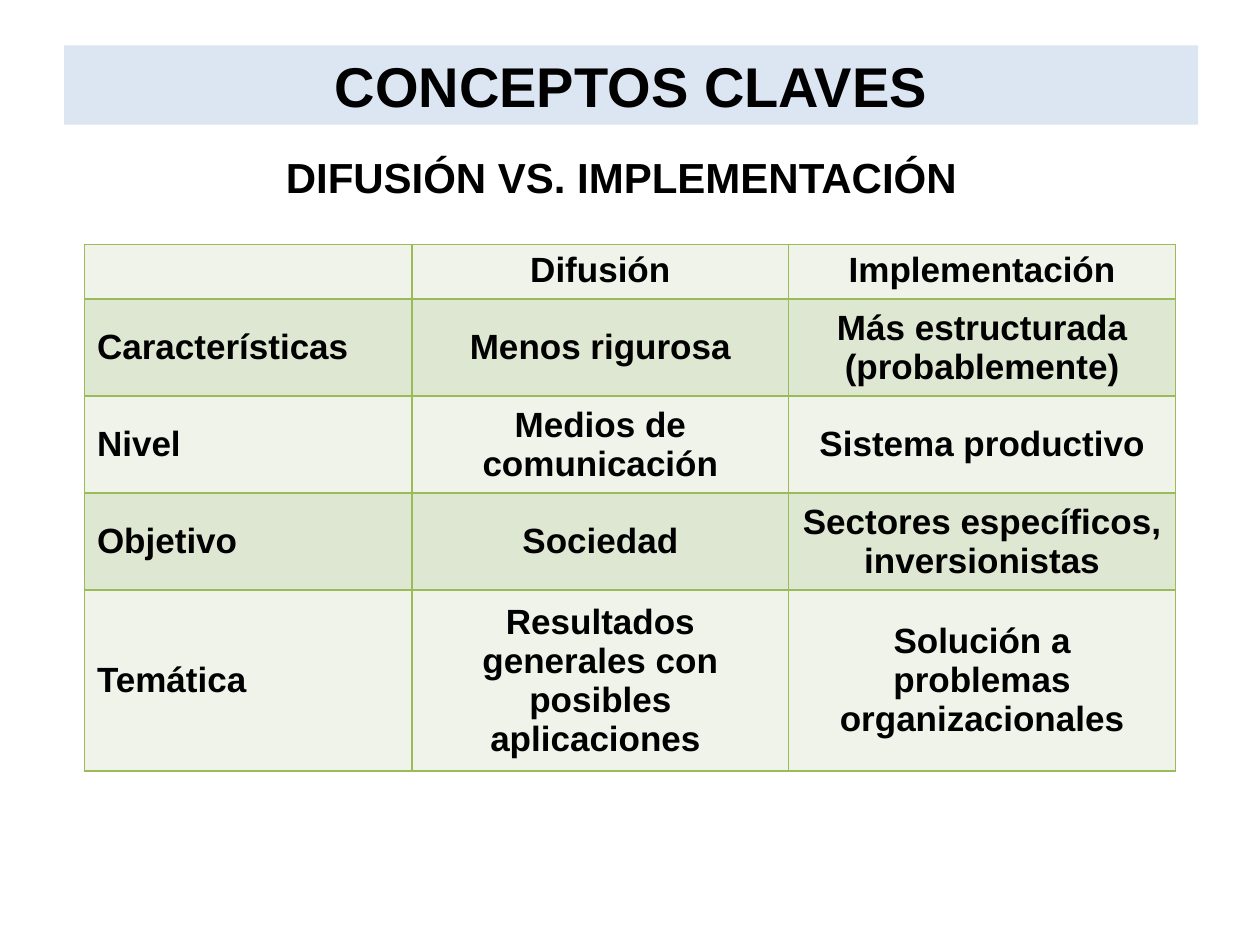
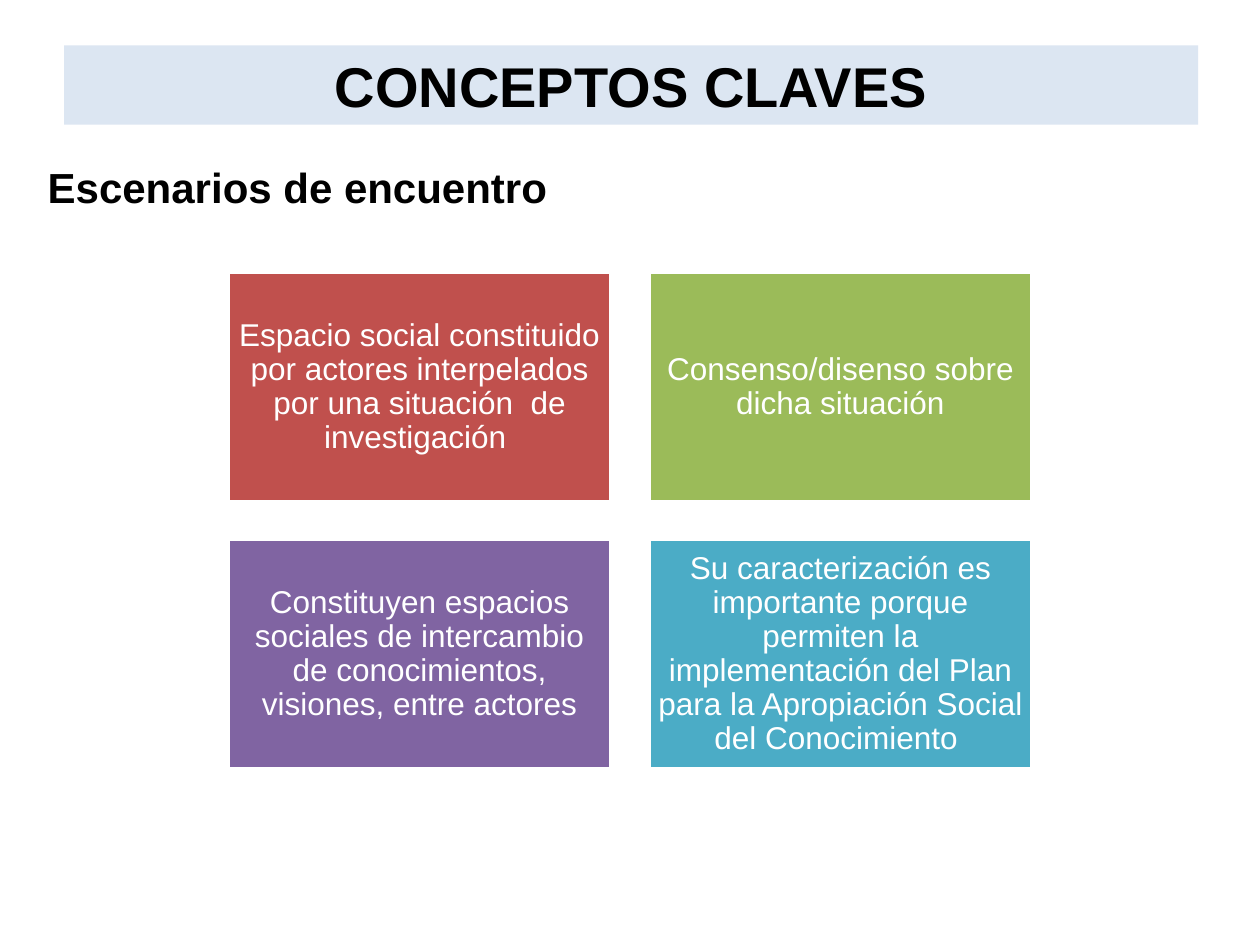
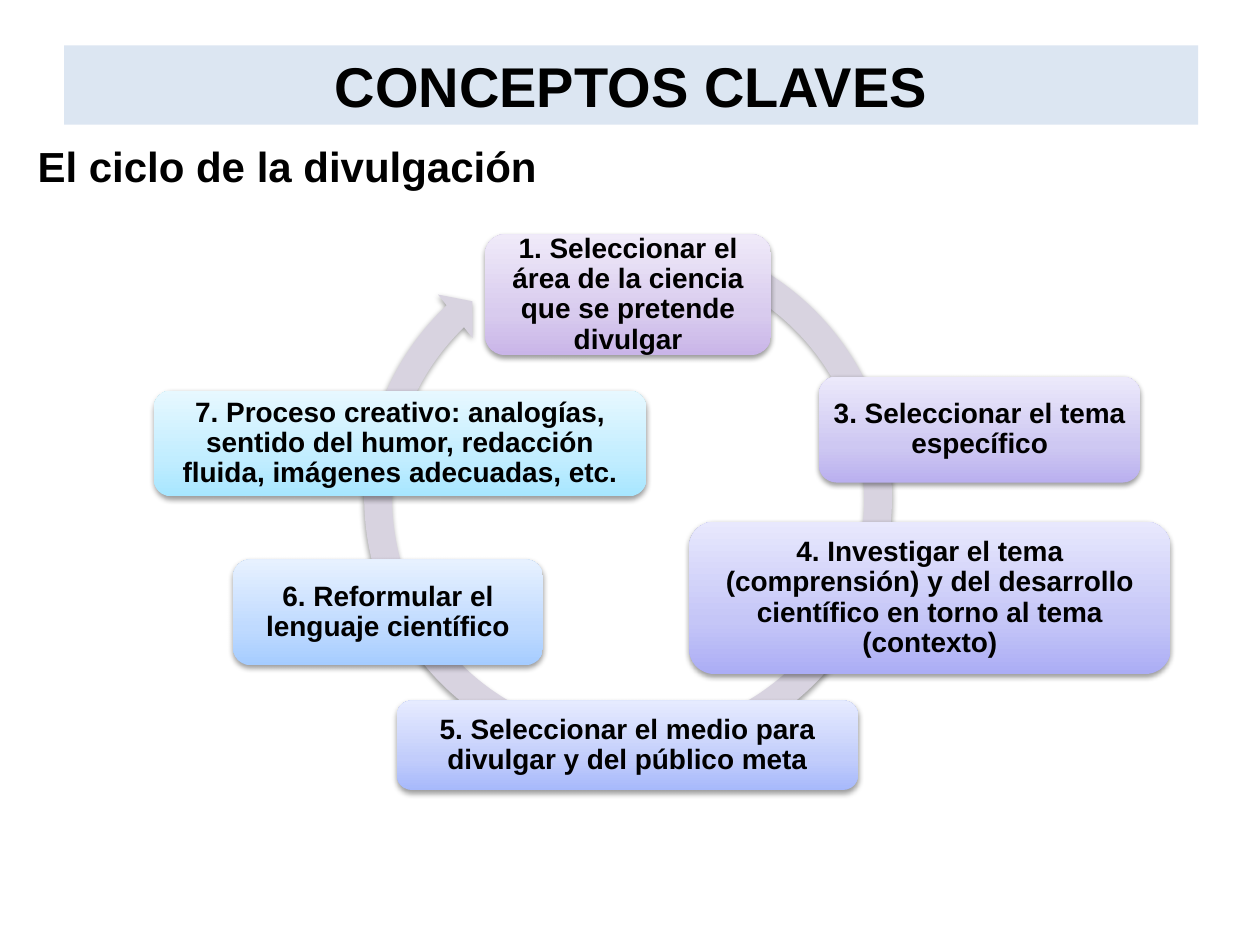
import dataclasses

import pptx
import pptx.dml.color
import pptx.enum.shapes
import pptx.enum.text
import pptx.oxml
import pptx.oxml.ns
import pptx.util

Inches, Pt = pptx.util.Inches, pptx.util.Pt
RGB = pptx.dml.color.RGBColor.from_string
SHAPE = pptx.enum.shapes.MSO_SHAPE
ALIGN = pptx.enum.text.PP_ALIGN
ANCHOR = pptx.enum.text.MSO_ANCHOR
FIT = pptx.enum.text.MSO_AUTO_SIZE


@dataclasses.dataclass(frozen=True)
class Theme:
    font: str = "Arial"
    ink: str = "000000"
    white: str = "FFFFFF"
    band: str = "DCE6F2"
    ring: str = "D8D3E0"
    rule: str = "9BBB59"
    rows: tuple = ("EFF3EA", "DEE7D1")
    title: int = 32
    head: int = 24
    cell: int = 20
    tile: int = 18
    step: int = 16


THEME = Theme()
TITLE = "CONCEPTOS CLAVES"

TABLE = [
    ("", "Difusión", "Implementación"),
    ("Características", "Menos rigurosa", "Más estructurada (probablemente)"),
    ("Nivel", "Medios de comunicación", "Sistema productivo"),
    ("Objetivo", "Sociedad", "Sectores específicos, inversionistas"),
    ("Temática", "Resultados generales con posibles aplicaciones ",
     "Solución a problemas organizacionales"),
]
WIDTHS = (2.6, 2.99, 3.07)
HEIGHTS = (0.43, 0.77, 0.77, 0.77, 1.43)

TILES = [
    ("Espacio social constituido por actores interpelados por una situación  de investigación ",
     "C0504D"),
    ("Consenso/disenso sobre dicha situación", "9BBB59"),
    ("Constituyen espacios sociales de intercambio de conocimientos, visiones, entre actores",
     "8064A2"),
    ("Su caracterización es importante porque permiten la implementación del Plan "
     "para la Apropiación Social del Conocimiento ", "4BACC6"),
]

# Text, place, and shades from bottom to top
STEPS = [
    ("1. Seleccionar el área de la ciencia que se pretende divulgar",
     (3.85, 1.86, 2.27, 0.96), ("C9B5E8", "D8CBEE", "F0EAF9")),
    ("3. Seleccionar el tema específico",
     (6.5, 2.99, 2.55, 0.84), ("BAB0EF", "CEC8F2", "ECE9FB")),
    ("4. Investigar el tema (comprensión) y del desarrollo científico en torno al tema (contexto)",
     (5.47, 4.14, 3.82, 1.21), ("ABADF5", "C5C6F7", "E8E8FD")),
    ("5. Seleccionar el medio para divulgar y del público meta",
     (3.15, 5.56, 3.66, 0.71), ("A7B9FB", "C2CDFB", "E6EBFF")),
    ("6. Reformular el lenguaje científico",
     (1.85, 4.44, 2.46, 0.84), ("A5CCFF", "BFDAFF", "E7F1FF")),
    ("7. Proceso creativo: analogías, sentido del humor, redacción fluida, "
     "imágenes adecuadas, etc.",
     (1.22, 3.1, 3.91, 0.84), ("A7E6FF", "C1EDFF", "E7F8FF")),
]
STOPS = (0, 35, 100)
RING = (2.78, 1.74, 4.41, 4.41)
BEND = (0.05, 3.13, 135.78, 175.19, 0.05)


def node(tag, body="", **attrs):
    """Make one DrawingML element."""
    pairs = "".join(f' {key}="{val}"' for key, val in attrs.items())
    space = pptx.oxml.ns.nsdecls("a")
    return pptx.oxml.parse_xml(f"<a:{tag} {space}{pairs}>{body}</a:{tag}>")


def write(frame, text, size, color=THEME.ink, bold=True, align=ALIGN.CENTER, space=None):
    para = frame.paragraphs[0]
    para.text = text
    para.alignment = align
    para.line_spacing = space
    font = para.font if not para.runs else para.runs[0].font
    font.name, font.size, font.bold = THEME.font, Pt(size), bold
    font.color.rgb = RGB(color)


def paint(shape, color):
    shape.fill.solid()
    shape.fill.fore_color.rgb = RGB(color)


def start(deck, head, place, wrap):
    """Add a slide with the title band and a heading."""
    slide = deck.slides.add_slide(deck.slide_layouts[5])
    band = slide.shapes.title
    band.left, band.top, band.width, band.height = map(Inches, (0.51, 0.36, 9, 0.63))
    paint(band, THEME.band)
    band.text_frame.auto_size = FIT.NONE
    band.text_frame.vertical_anchor = ANCHOR.MIDDLE
    write(band.text_frame, TITLE, THEME.title)

    frame = slide.shapes.add_textbox(*map(Inches, place)).text_frame
    frame.word_wrap = wrap
    frame.auto_size = FIT.SHAPE_TO_FIT_TEXT
    write(frame, head, THEME.head, align=ALIGN.LEFT)
    return slide


def add_box(slide, kind, place):
    box = slide.shapes.add_shape(kind, *map(Inches, place))
    box.shadow.inherit = False
    box.line.fill.background()
    return box


def label(box, text, size, **style):
    """Write centred text with narrow margins in a box."""
    frame = box.text_frame
    frame.word_wrap = True
    frame.vertical_anchor = ANCHOR.MIDDLE
    frame.margin_left = frame.margin_right = Inches(0.07)
    frame.margin_top = frame.margin_bottom = Inches(0.07)
    write(frame, text, size, space=0.9, **style)


def shade(box):
    """Cast a soft shadow straight down."""
    glow = node("outerShdw", '<a:srgbClr val="000000"><a:alpha val="38000"/></a:srgbClr>',
                blurRad=Pt(3.1), dist=Pt(1.6), dir=5400000, rotWithShape=0)
    box._element.spPr.find(pptx.oxml.ns.qn("a:effectLst")).append(glow)


def blend(box, colors):
    """Fill a box with a gradient that rises from the bottom."""
    box.fill.gradient()
    box.fill.gradient_angle = 90
    stops = box._element.spPr.find(".//" + pptx.oxml.ns.qn("a:gsLst"))
    stops[:] = [node("gs", f'<a:srgbClr val="{color}"/>', pos=stop * 1000)
                for stop, color in zip(STOPS, colors)]


def frame_cell(cell):
    """Draw the four borders of a cell."""
    fill = f'<a:solidFill><a:srgbClr val="{THEME.rule}"/></a:solidFill>'
    for side in "LRTB":
        cell._tc.get_or_add_tcPr().append(node("ln" + side, fill, w=Pt(1)))


def contrast(deck):
    slide = start(deck, "DIFUSIÓN VS. IMPLEMENTACIÓN", (2.17, 1.15, 5.54, 0.5), False)
    place = (0.67, 1.94, sum(WIDTHS), sum(HEIGHTS))
    table = slide.shapes.add_table(len(TABLE), len(WIDTHS), *map(Inches, place)).table
    table.first_row = table.horz_banding = False
    for col, width in zip(table.columns, WIDTHS):
        col.width = Inches(width)
    for i, (row, height) in enumerate(zip(TABLE, HEIGHTS)):
        table.rows[i].height = Inches(height)
        for j, text in enumerate(row):
            cell = table.cell(i, j)
            frame_cell(cell)
            paint(cell, THEME.rows[i % 2])
            cell.vertical_anchor = ANCHOR.MIDDLE if i else ANCHOR.TOP
            write(cell.text_frame, text, THEME.cell,
                  align=ALIGN.CENTER if j else ALIGN.LEFT)


def scenes(deck):
    slide = start(deck, "Escenarios de encuentro", (0.28, 1.23, 9.39, 0.5), True)
    left, top, width, height, gap = 1.81, 2.16, 3.04, 1.82, 0.3
    for i, (text, color) in enumerate(TILES):
        row, col = divmod(i, 2)
        place = (left + col * (width + gap), top + row * (height + gap), width, height)
        tile = add_box(slide, SHAPE.RECTANGLE, place)
        paint(tile, color)
        tile.line.color.rgb = RGB(THEME.white)
        tile.line.width = Pt(2)
        label(tile, text, THEME.tile, color=THEME.white, bold=False)


def cycle(deck):
    slide = start(deck, "El ciclo de la divulgación", (0.2, 1.07, 4.2, 0.5), False)
    ring = add_box(slide, SHAPE.CIRCULAR_ARROW, RING)
    for i, bend in enumerate(BEND):
        ring.adjustments[i] = bend
    paint(ring, THEME.ring)
    shade(ring)
    for text, place, colors in STEPS:
        step = add_box(slide, SHAPE.ROUNDED_RECTANGLE, place)
        blend(step, colors)
        shade(step)
        label(step, text, THEME.step)


def main():
    deck = pptx.Presentation()
    deck.slide_width, deck.slide_height = Inches(10), Inches(7.5)
    contrast(deck)
    scenes(deck)
    cycle(deck)
    deck.save("out.pptx")


if __name__ == "__main__":
    main()
